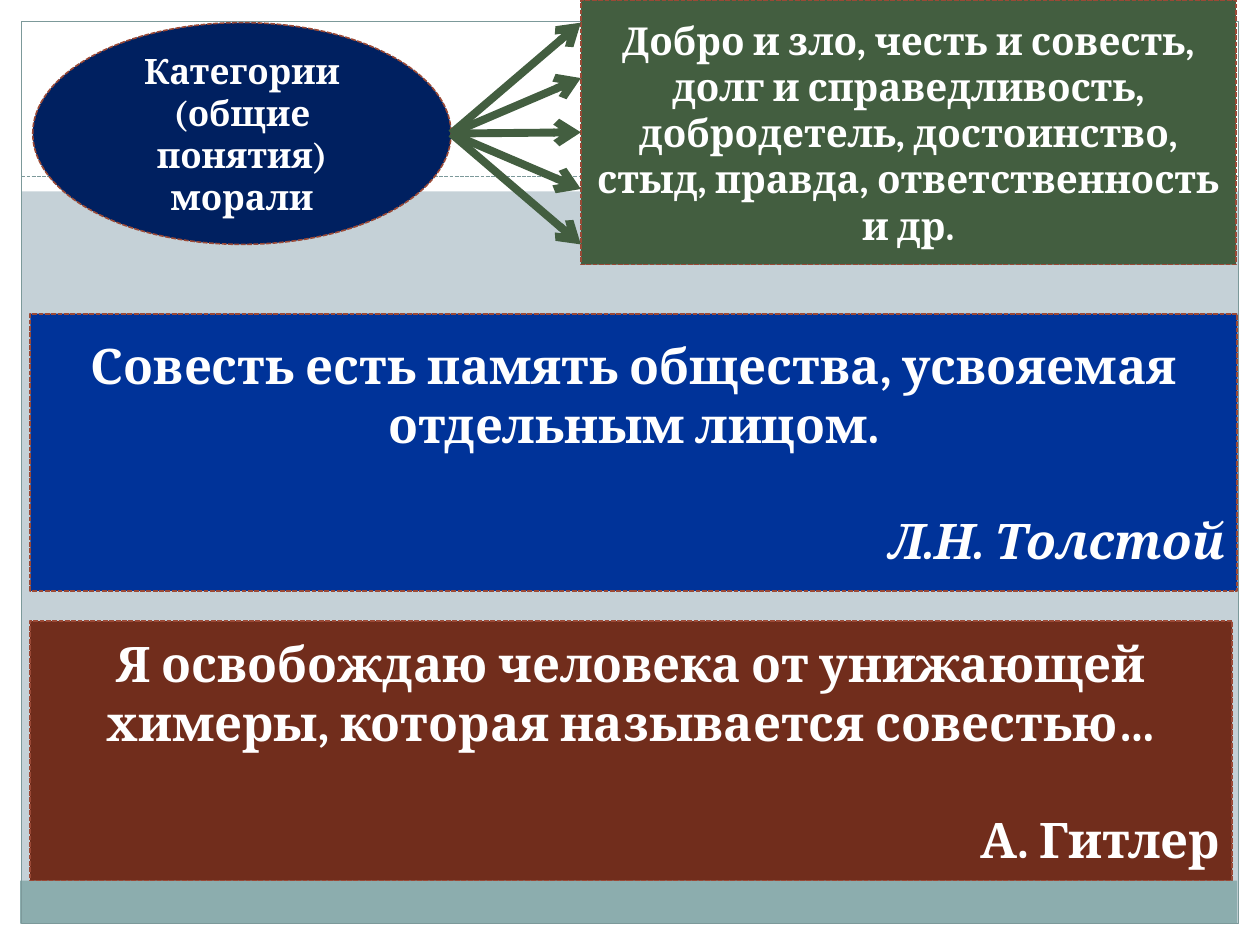
"""Build a slide on the categories of morality with two opposing quotations."""
from dataclasses import dataclass
from typing import Optional

from lxml.etree import SubElement
from pptx import Presentation
from pptx.dml.color import RGBColor
from pptx.enum.dml import MSO_LINE_DASH_STYLE as Dash
from pptx.enum.shapes import MSO_CONNECTOR_TYPE as ConnectorType
from pptx.enum.shapes import MSO_SHAPE as Preset
from pptx.enum.text import MSO_ANCHOR as Anchor
from pptx.enum.text import PP_ALIGN as Align
from pptx.oxml.ns import qn
from pptx.util import Inches, Pt

WHITE = RGBColor(0xFF, 0xFF, 0xFF)
BACKGROUND = RGBColor(0xC5, 0xD1, 0xD7)
TEAL = RGBColor(0x8C, 0xAD, 0xAE)
FRAME_GREY = RGBColor(0x7C, 0x99, 0x9A)
RUST = RGBColor(0x9B, 0x49, 0x36)
NAVY = RGBColor(0x00, 0x20, 0x60)
GREEN = RGBColor(0x43, 0x5E, 0x40)
BROWN = RGBColor(0x71, 0x2D, 0x1C)
BLUE = RGBColor(0x00, 0x33, 0x99)
FONT = "Cambria"
ARROW_COUNT = 5


@dataclass(frozen=True)
class Box:
    left: float
    top: float
    width: float
    height: float
    fill: Optional[RGBColor] = None
    line: Optional[RGBColor] = None
    line_width: float = 0.75
    dash: Optional[Dash] = None
    preset: Preset = Preset.RECTANGLE


@dataclass(frozen=True)
class Quotation:
    box: Box
    text: str
    author: str
    italic_author: bool = False


def panel(left: float, top: float, width: float, height: float,
          fill: RGBColor, preset: Preset = Preset.RECTANGLE) -> Box:
    return Box(left, top, width, height, fill, RUST, 0.9, Dash.SQUARE_DOT, preset)


BACKDROP = [
    Box(0, 7.33, 10, 0.17, WHITE),
    Box(0, 0, 10, 1.52, WHITE),
    Box(0, 0, 0.17, 7.5, WHITE),
    Box(9.83, 0, 0.17, 7.5, WHITE),
    Box(0.16, 6.99, 9.66, 0.34, TEAL),
    Box(0.17, 0.17, 9.66, 7.16, line=FRAME_GREY),
]
CATEGORIES = panel(0.26, 0.18, 3.32, 1.76, NAVY, Preset.OVAL)
EXAMPLES = panel(4.61, 0, 5.2, 2.1, GREEN)
QUOTATIONS = [
    Quotation(panel(0.24, 4.93, 9.54, 2.06, BROWN),
              "Я освобождаю человека от унижающей химеры, которая называется совестью…",
              "А. Гитлер"),
    Quotation(panel(0.24, 2.49, 9.58, 2.2, BLUE),
              "Совесть есть память общества, усвояемая отдельным лицом.",
              "Л.Н. Толстой", italic_author=True),
]


def draw_box(slide, box: Box):
    shape = slide.shapes.add_shape(box.preset, Inches(box.left), Inches(box.top),
                                   Inches(box.width), Inches(box.height))
    shape.shadow.inherit = False
    if box.fill is None:
        shape.fill.background()
    else:
        shape.fill.solid()
        shape.fill.fore_color.rgb = box.fill
    if box.line is None:
        shape.line.fill.background()
    else:
        shape.line.color.rgb = box.line
        shape.line.width = Pt(box.line_width)
        if box.dash is not None:
            shape.line.dash_style = box.dash
    return shape


def write_text(shape, text: str, *, size: float, align: Align = Align.CENTER,
               italic: bool = False, space_before: float = 0) -> None:
    frame = shape.text_frame
    frame.word_wrap = True
    frame.vertical_anchor = Anchor.MIDDLE
    paragraph = frame.add_paragraph() if frame.text else frame.paragraphs[0]
    paragraph.alignment = align
    paragraph.space_before = Pt(space_before)
    run = paragraph.add_run()
    run.text = text
    run.font.name = FONT
    run.font.size = Pt(size)
    run.font.bold = True
    run.font.italic = italic
    run.font.color.rgb = WHITE


def draw_line(slide, start: tuple[float, float], end: tuple[float, float],
              color: RGBColor, width: float, *, dash: Optional[Dash] = None,
              arrow: bool = False):
    connector = slide.shapes.add_connector(
        ConnectorType.STRAIGHT, *(Inches(value) for value in (*start, *end)))
    connector.line.color.rgb = color
    connector.line.width = Pt(width)
    if dash is not None:
        connector.line.dash_style = dash
    properties = connector._element.spPr
    if arrow:
        SubElement(properties.find(qn("a:ln")), qn("a:tailEnd"), type="arrow")
    SubElement(properties, qn("a:effectLst"))
    return connector


def draw_arrows(slide, target) -> None:
    start = (CATEGORIES.left + CATEGORIES.width, CATEGORIES.top + CATEGORIES.height / 2)
    step = CATEGORIES.height / (ARROW_COUNT - 1)
    for index in range(ARROW_COUNT):
        end = (EXAMPLES.left, CATEGORIES.top + index * step)
        connector = draw_line(slide, start, end, GREEN, 4.5, arrow=True)
        if index == ARROW_COUNT // 2:
            connector.end_connect(target, 1)


def main() -> None:
    presentation = Presentation()
    presentation.slide_width = Inches(10)
    presentation.slide_height = Inches(7.5)
    slide = presentation.slides.add_slide(presentation.slide_layouts[6])
    slide.background.fill.solid()
    slide.background.fill.fore_color.rgb = BACKGROUND

    for box in BACKDROP:
        draw_box(slide, box)
    draw_line(slide, (0.17, 1.4), (9.83, 1.4), FRAME_GREY, 0.75, dash=Dash.SQUARE_DOT)

    categories = draw_box(slide, CATEGORIES)
    write_text(categories, "Категории (общие понятия) морали", size=20)
    examples = draw_box(slide, EXAMPLES)
    write_text(examples, "Добро и зло, честь и совесть, долг и справедливость, "
               "добродетель, достоинство, стыд, правда, ответственность и др.", size=22)
    draw_arrows(slide, examples)

    for quotation in QUOTATIONS:
        shape = draw_box(slide, quotation.box)
        write_text(shape, quotation.text, size=28)
        write_text(shape, quotation.author, size=28, align=Align.RIGHT,
                   italic=quotation.italic_author, space_before=33)

    presentation.save("out.pptx")


if __name__ == "__main__":
    main()
